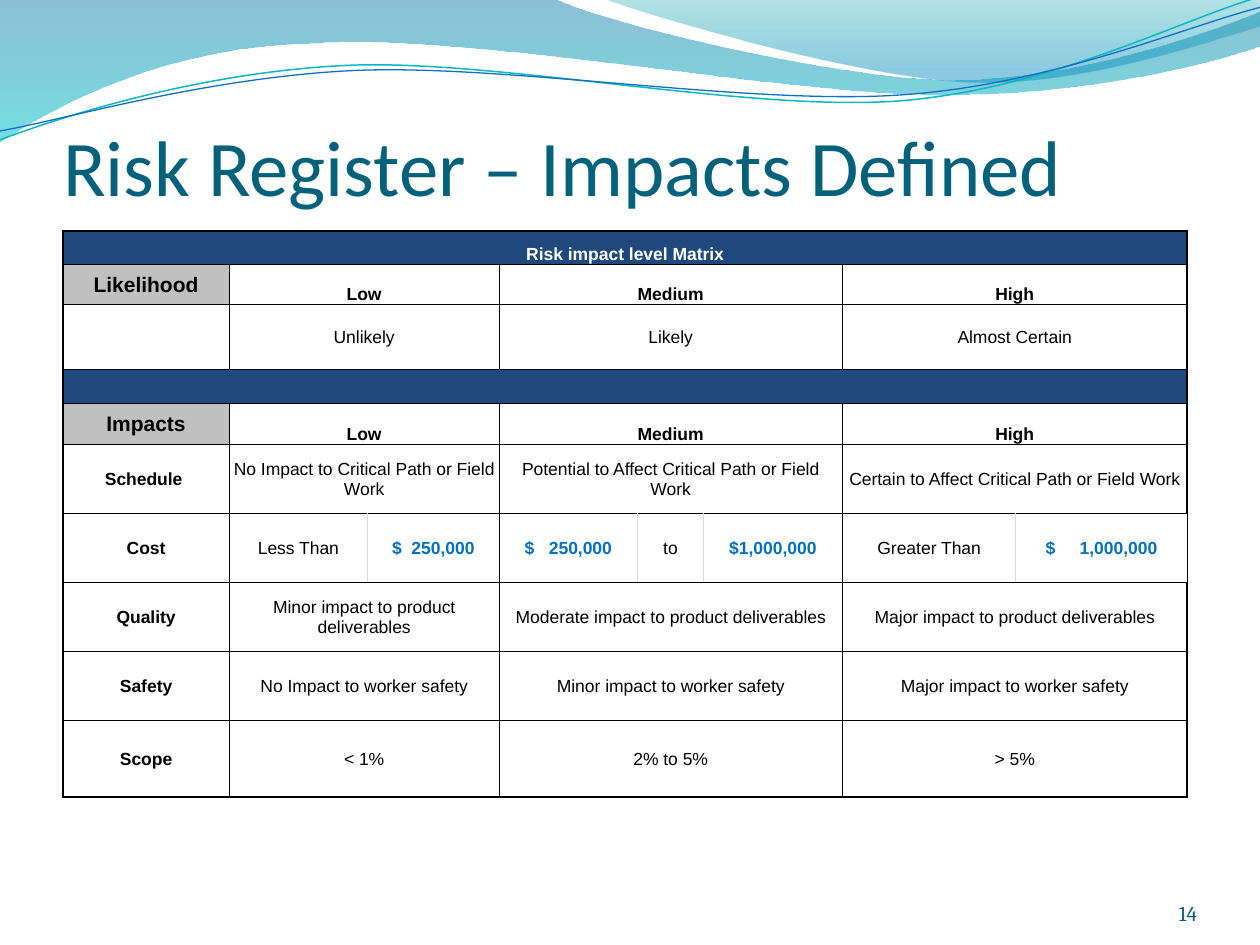
from dataclasses import dataclass

from lxml.etree import SubElement
from pptx import Presentation
from pptx.dml.color import RGBColor
from pptx.enum.text import MSO_ANCHOR, MSO_AUTO_SIZE, PP_ALIGN
from pptx.oxml.ns import qn
from pptx.util import Cm, Pt


@dataclass(frozen=True)
class Theme:
    title: str = "04617B"
    number: str = "045D75"
    band: str = "1F497D"
    label: str = "C0C0C0"
    white: str = "FFFFFF"
    ink: str = "000000"
    money: str = "0070C0"
    split: str = "D9D9D9"
    head_size: int = 45
    num_size: int = 12
    label_size: int = 12
    cell_size: int = 10
    thin: float = 0.5
    thick: float = 1


THEME = Theme()
NO_STYLE = "{2D5ABB26-0587-4C30-8999-92F81FD0307C}"

# Waves in cm: start point, then lines (2 numbers) or curves (6 numbers)
FILLS = [
    ([("0074A1", 45, 0), ("00C6CF", 55, 1)],
     (0, 0), [(11.18, -0.03),
              (12.09, 0.43, 16.87, 1.6, 19.25, 1.6),
              (21.67, 1.6, 24.33, 0.66, 25.4, 0.23),
              (25.43, 0.91),
              (24.97, 1.12, 22.1, 1.93, 18.95, 1.91),
              (15.8, 1.91, 9.7, 0.71, 6.53, 0.86),
              (3.28, 0.91, 1.17, 2.11, -0.03, 2.87)]),
    ([("00A1A9", 30, 0), ("008BBF", 45, 0.8)],
     (12.17, -0.03), [(12.93, 0.28, 17.32, 1.57, 19.53, 1.65),
                      (21.74, 1.75, 24.41, 0.81, 25.4, 0.53),
                      (25.4, 0)]),
]
TILT = 357.3
LINES = [
    ("0AB8BF", 0.85, (-0.05, 2.22), [(1.19, 1.82, 4.02, 1.04, 7.05, 1.05),
                                     (10.05, 1.07, 15.02, 2.37, 18.08, 2.29),
                                     (21.13, 2.2, 23.87, 0.91, 25.41, 0.55)]),
    ("0F6FC6", 0.75, (-0.04, 2.04), [(1.16, 1.9, 4.18, 1.15, 7.2, 1.16),
                                     (10.25, 1.18, 15.13, 2.25, 18.18, 2.17),
                                     (21.21, 2.1, 23.93, 1.06, 25.45, 0.75)]),
]

# Matrix: column widths and (kind, height, texts) for each row
COLS = [3.35, 2.79, 2.65, 2.79, 1.33, 2.8, 3.5, 3.45]
GROUPS = [(1, 2), (3, 5), (6, 7)]
LEVELS = ["Low", "Medium", "High"]
ROWS = [
    ("title", 0.67, ["Risk impact level Matrix"]),
    ("head", 0.81, ["Likelihood", *LEVELS]),
    ("body", 1.31, ["", "Unlikely", "Likely", "Almost Certain"]),
    ("band", 0.68, []),
    ("head", 0.83, ["Impacts", *LEVELS]),
    ("body", 1.39, ["Schedule ", "No Impact to Critical Path or Field Work",
                    "Potential to Affect Critical Path or Field Work",
                    "Certain to Affect Critical Path or Field Work"]),
    ("cost", 1.39, ["Cost", "Less Than", "$ 250,000", "$ 250,000", "to",
                    "$1,000,000", "Greater Than", "$ 1,000,000"]),
    ("body", 1.39, ["Quality", "Minor impact to product deliverables",
                    "Moderate impact to product deliverables",
                    "Major impact to product deliverables"]),
    ("body", 1.39, ["Safety", "No Impact to worker safety",
                    "Minor impact to worker safety",
                    "Major impact to worker safety"]),
    ("body", 1.55, ["Scope", "< 1%", "2% to 5%", "> 5%"]),
]
GAPS = {2: 2.78, 3: 5.56, 7: 11.12}  # points after the dollar sign, by column


def rgb(code):
    return RGBColor.from_string(code)


def style(font, name, size, color, bold=False):
    font.name, font.size, font.bold = name, Pt(size), bold
    font.color.rgb = rgb(color)


def add_curve(shapes, box, start, parts, close):
    left, top = box[:2]
    flat = [start] + [part[i:i + 2] for part in parts
                      for i in range(0, len(part), 2)]
    pts = [(Cm(left + x), Cm(top + y)) for x, y in flat]
    form = shapes.build_freeform(*pts[0])
    form.add_line_segments(pts[1:], close=close)
    shape = form.convert_to_shape()
    shape.shadow.inherit = False
    # Join each three points of a curve into one cubic segment
    trail = next(shape.element.iter(qn("a:path")))
    nodes = iter(trail.findall(qn("a:lnTo")))
    for part in parts:
        first, *rest = [next(nodes) for _ in range(len(part) // 2)]
        if rest:
            first.tag = qn("a:cubicBezTo")
        for node in rest:
            first.append(node[0])
            trail.remove(node)
    return shape


def add_waves(slide, box):
    for stops, start, parts in FILLS:
        shape = add_curve(slide.shapes, box, start, parts, True)
        shape.line.fill.background()
        shape.fill.gradient()
        shape.fill.gradient_angle = 270
        for stop, (color, _, place) in zip(shape.fill.gradient_stops, stops):
            stop.color.rgb, stop.position = rgb(color), place
        for node, (_, alpha, _) in zip(shape.element.iter(qn("a:srgbClr")), stops):
            SubElement(node, qn("a:alpha"), val=str(alpha * 1000))
    group = slide.shapes.add_group_shape()
    for color, width, start, parts in LINES:
        shape = add_curve(group.shapes, box, start, parts, False)
        shape.rotation = TILT
        shape.fill.background()
        shape.line.color.rgb, shape.line.width = rgb(color), Pt(width)


def set_text(shape, text, align, font, size, color, top=0):
    frame = shape.text_frame
    frame.text = text
    frame.word_wrap, frame.auto_size = True, MSO_AUTO_SIZE.NONE
    frame.vertical_anchor = MSO_ANCHOR.BOTTOM
    frame.margin_left = frame.margin_right = frame.margin_bottom = 0
    frame.margin_top = Cm(top)
    frame.paragraphs[0].alignment = align
    style(frame.paragraphs[0].runs[0].font, font, size, color)


def add_title(slide, box):
    title = slide.shapes.title
    title.left, title.top, title.width, title.height = map(Cm, box)
    set_text(title, "Risk Register – Impacts Defined", PP_ALIGN.LEFT,
             "Calibri", THEME.head_size, THEME.title, 0.13)


def add_number(slide, box):
    text = slide.shapes.add_textbox(*map(Cm, box))
    set_text(text, "14", PP_ALIGN.RIGHT, "Cambria", THEME.num_size, THEME.number)


def edge(kind, col):
    """Colour and width of the vertical rule left of a column."""
    if col in (0, len(COLS)):
        return THEME.ink, THEME.thin if kind == "cost" and col else THEME.thick
    if kind in ("title", "band"):
        return None
    if col in [first for first, _ in GROUPS]:
        return THEME.ink, THEME.thin
    return (THEME.split, THEME.thin) if kind == "cost" else None


def set_edges(cell, kind, row, col):
    wide = cell.span_width if cell.is_merge_origin else 1
    ends = [THEME.thick if at in (0, len(ROWS)) else THEME.thin
            for at in (row, row + 1)]
    rules = [edge(kind, col), edge(kind, col + wide),
             *[(THEME.ink, width) for width in ends]]
    if cell.is_spanned:
        rules = [rule and (rule[0], THEME.thin) for rule in rules]
    props = cell._tc.get_or_add_tcPr()
    for side, rule in zip("LRTB", rules):
        line = SubElement(props, qn("a:ln" + side))
        if rule is None:
            SubElement(line, qn("a:noFill"))
            continue
        line.set("w", str(Pt(rule[1])))
        SubElement(SubElement(line, qn("a:solidFill")), qn("a:srgbClr"), val=rule[0])


def fill_cell(cell, kind, col, text):
    label = kind == "head" and col == 0
    dark = kind in ("title", "band")
    low = kind == "title" or (kind == "head" and col > 0)
    if dark or label:
        cell.fill.solid()
        cell.fill.fore_color.rgb = rgb(THEME.band if dark else THEME.label)
    else:
        cell.fill.background()
    cell.margin_left = cell.margin_right = cell.margin_top = Cm(0.03)
    cell.margin_bottom = 0
    cell.vertical_anchor = MSO_ANCHOR.BOTTOM if low else MSO_ANCHOR.MIDDLE
    para = cell.text_frame.paragraphs[0]
    para.alignment = PP_ALIGN.CENTER
    if not text:  # keeps blank rows from growing
        para._p.get_or_add_endParaRPr().set("sz", str(THEME.cell_size * 100))
        return
    money = text.startswith("$")
    para.text = text
    if money and col in GAPS:  # widen the gap after the dollar sign
        para.text = "$"
        para.runs[0]._r.get_or_add_rPr().set("spc", str(round(GAPS[col] * 100)))
        para.add_run().text = text[1:]
    color = THEME.white if dark else THEME.money if money else THEME.ink
    for run in para.runs:
        style(run.font, "Arial", THEME.label_size if label else THEME.cell_size,
              color, kind in ("title", "head") or col == 0 or money)


def add_matrix(slide, box):
    table = slide.shapes.add_table(len(ROWS), len(COLS), *map(Cm, box)).table
    table.first_row = table.horz_banding = False
    table._tbl.tblPr.find(qn("a:tableStyleId")).text = NO_STYLE
    for col, width in zip(table.columns, COLS):
        col.width = Cm(width)
    spans = {"title": [(0, len(COLS) - 1)], "head": GROUPS, "body": GROUPS}
    for row, (kind, height, texts) in enumerate(ROWS):
        table.rows[row].height = Cm(height)
        for first, last in spans.get(kind, []):
            table.cell(row, first).merge(table.cell(row, last))
        words = iter(texts)
        for col in range(len(COLS)):
            cell = table.cell(row, col)
            set_edges(cell, kind, row, col)
            fill_cell(cell, kind, col, "" if cell.is_spanned else next(words, ""))


def main():
    deck = Presentation()
    deck.slide_width, deck.slide_height = Cm(25.4), Cm(19.05)
    slide = deck.slides.add_slide(deck.slide_layouts[5])
    add_waves(slide, (0, 0, 25.4, 2.9))
    add_title(slide, (1.27, 2.12, 22.86, 2.16))
    add_number(slide, (22.02, 17.65, 2.11, 1.02))
    add_matrix(slide, (1.27, 4.66, 22.66, 11.41))
    deck.save("out.pptx")


if __name__ == "__main__":
    main()
